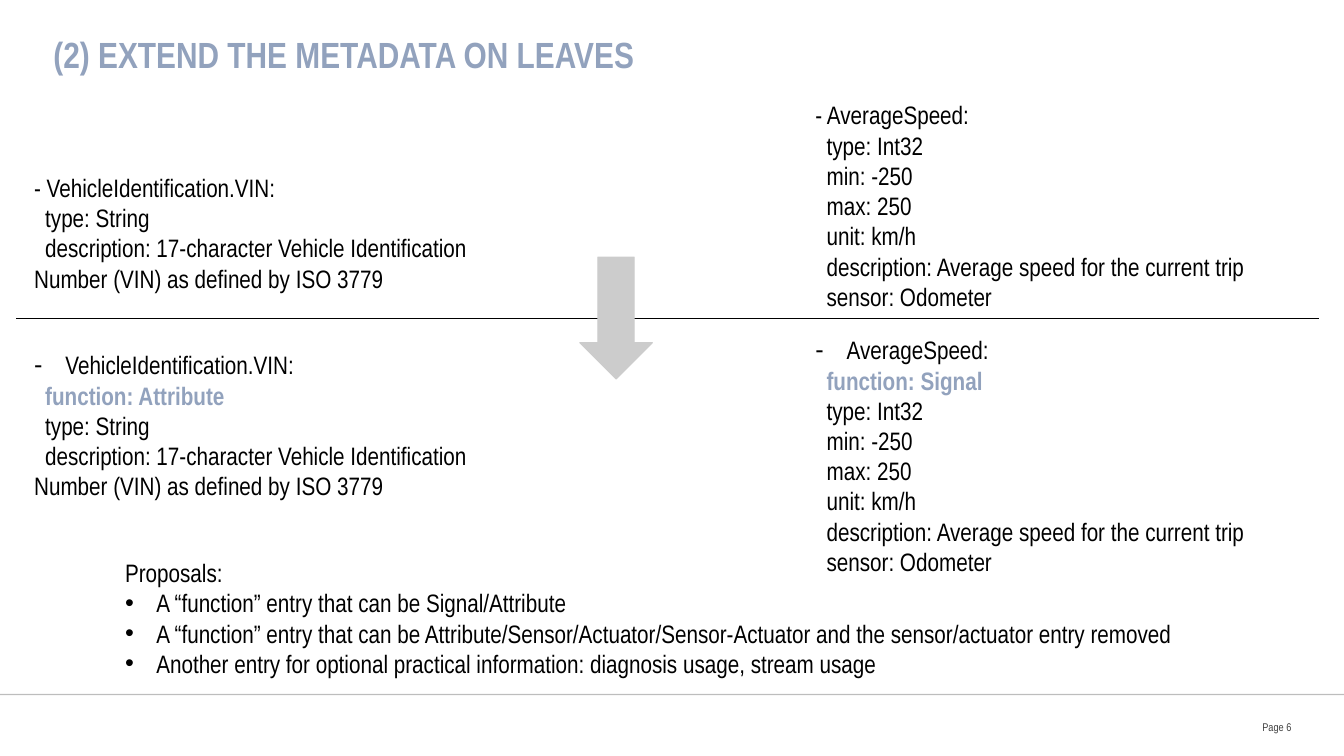
from lxml import etree
from pptx import Presentation
from pptx.dml.color import RGBColor
from pptx.enum.shapes import MSO_CONNECTOR, MSO_SHAPE
from pptx.enum.text import MSO_ANCHOR, MSO_AUTO_SIZE, PP_ALIGN
from pptx.oxml.ns import qn
from pptx.util import Inches, Pt

BLACK = RGBColor(0x00, 0x00, 0x00)
ACCENT = RGBColor(0x92, 0xA2, 0xBD)
ARROW_GREY = RGBColor(0xCC, 0xCC, 0xCC)
PAGE_GREY = RGBColor(0x40, 0x40, 0x40)

VIN = "VehicleIdentification.VIN:"
VIN_FIELDS = [
    "type: String",
    "description: 17-character Vehicle Identification Number (VIN) as defined by ISO 3779",
]
SPEED = "AverageSpeed:"
SPEED_FIELDS = [
    "type: Int32",
    "min: -250",
    "max: 250",
    "unit: km/h",
    "description: Average speed for the current trip",
    "sensor: Odometer",
]
PROPOSALS = [
    "A “function” entry that can be Signal/Attribute",
    "A “function” entry that can be Attribute/Sensor/Actuator/Sensor-Actuator "
    "and the sensor/actuator entry removed",
    "Another entry for optional practical information: diagnosis usage, stream usage",
]


class SlideBuilder:
    font_name = "Arial Narrow"
    text_size = 18
    hanging = 0.31
    field_indent = 0.11

    def __init__(self, slide):
        self.slide = slide

    def place(self, shape, left, top, width, height):
        shape.left, shape.top = Inches(left), Inches(top)
        shape.width, shape.height = Inches(width), Inches(height)

    def prepare(self, text_frame, anchor=MSO_ANCHOR.TOP, inset=None):
        text_frame.word_wrap = True
        text_frame.auto_size = MSO_AUTO_SIZE.NONE
        text_frame.vertical_anchor = anchor
        if inset is not None:
            text_frame.margin_left = text_frame.margin_right = Inches(inset)
            text_frame.margin_top = text_frame.margin_bottom = Inches(inset)

    def style(self, paragraph, size=text_size, color=BLACK, bold=False, align=PP_ALIGN.LEFT):
        paragraph.alignment = align
        paragraph.space_before = Pt(0)
        for run in paragraph.runs:
            run.font.name = self.font_name
            run.font.size = Pt(size)
            run.font.bold = bold
            run.font.color.rgb = color

    def indent(self, paragraph, margin=0, first_line=0, bullet=None):
        """Set the left margin, the first-line offset and the bullet, if any."""
        properties = paragraph._p.get_or_add_pPr()
        properties.set("marL", str(Inches(margin)))
        properties.set("indent", str(Inches(first_line)))
        if bullet:
            etree.SubElement(properties, qn("a:buFont"), typeface="Arial")
            etree.SubElement(properties, qn("a:buChar"), char=bullet)
        else:
            etree.SubElement(properties, qn("a:buNone"))

    def title(self, text, *box):
        shape = self.slide.shapes.title
        self.place(shape, *box)
        shape.text_frame.text = text
        self.prepare(shape.text_frame, inset=0)
        paragraph = shape.text_frame.paragraphs[0]
        self.style(paragraph, 26, ACCENT, True)
        paragraph.line_spacing = Pt(27)

    def page_number(self, text, *box):
        shape = self.slide.shapes.add_textbox(*map(Inches, box))
        shape.text_frame.text = text
        self.prepare(shape.text_frame, MSO_ANCHOR.MIDDLE, 0)
        self.style(shape.text_frame.paragraphs[0], 8, PAGE_GREY, align=PP_ALIGN.RIGHT)

    def leaf(self, name, fields, *box, function=None):
        """Add a metadata leaf; a function entry is highlighted above its fields."""
        shape = self.slide.shapes.add_textbox(*map(Inches, box))
        added = [f"function: {function}"] if function else []
        heading = name if function else f"- {name}"
        shape.text_frame.text = "\n".join([heading, *added, *fields])
        self.prepare(shape.text_frame)
        first, *entries = shape.text_frame.paragraphs
        self.style(first)
        if function:
            self.indent(first, self.hanging, -self.hanging, "-")
        for paragraph in entries:
            new = paragraph.text in added
            self.style(paragraph, color=ACCENT if new else BLACK, bold=new)
            self.indent(paragraph, first_line=self.field_indent)

    def bullet_list(self, heading, items, *box):
        shape = self.slide.placeholders[1]
        self.place(shape, *box)
        shape.text_frame.text = "\n".join([heading, *items])
        self.prepare(shape.text_frame)
        first, *bullets = shape.text_frame.paragraphs
        self.style(first)
        self.indent(first)
        for paragraph in bullets:
            self.style(paragraph)
            self.indent(paragraph, self.hanging, -self.hanging, "•")

    def rule(self, left, right, top, width, opacity=100):
        line = self.slide.shapes.add_connector(
            MSO_CONNECTOR.STRAIGHT, Inches(left), Inches(top), Inches(right), Inches(top))
        line.line.color.rgb = BLACK
        line.line.width = Pt(width)
        properties = line._element.spPr
        if opacity < 100:
            color = properties.find(".//" + qn("a:srgbClr"))
            etree.SubElement(color, qn("a:alpha"), val=str(opacity * 1000))
        etree.SubElement(properties, qn("a:effectLst"))

    def down_arrow(self, *box):
        arrow = self.slide.shapes.add_shape(MSO_SHAPE.DOWN_ARROW, *map(Inches, box))
        arrow.shadow.inherit = False
        arrow.fill.solid()
        arrow.fill.fore_color.rgb = ARROW_GREY
        arrow.line.color.rgb = ARROW_GREY
        arrow.line.width = Pt(0.75)


def main():
    presentation = Presentation()
    presentation.slide_width, presentation.slide_height = Inches(13.33), Inches(7.5)
    builder = SlideBuilder(presentation.slides.add_slide(presentation.slide_layouts[1]))

    builder.rule(0, 13.33, 6.89, 1, opacity=25)
    builder.title("(2) EXTEND THE METADATA ON LEAVES", 0.53, 0.38, 12.28, 0.77)
    builder.page_number("Page 6", 11.58, 7.03, 1.23, 0.36)
    builder.leaf(SPEED, SPEED_FIELDS, 7.99, 0.94, 5.34, 2.22)
    builder.leaf(VIN, VIN_FIELDS, 0.24, 1.66, 4.71, 1.31)
    builder.leaf(VIN, VIN_FIELDS, 0.24, 3.42, 4.71, 1.62, function="Attribute")
    builder.leaf(SPEED, SPEED_FIELDS, 7.99, 3.27, 5.34, 2.52, function="Signal")
    builder.bullet_list("Proposals:", PROPOSALS, 1.14, 5.48, 11.14, 1.62)
    builder.rule(0.16, 13.08, 3.16, 0.75)
    builder.down_arrow(5.75, 2.55, 0.72, 1.21)

    presentation.save("out.pptx")


if __name__ == "__main__":
    main()
